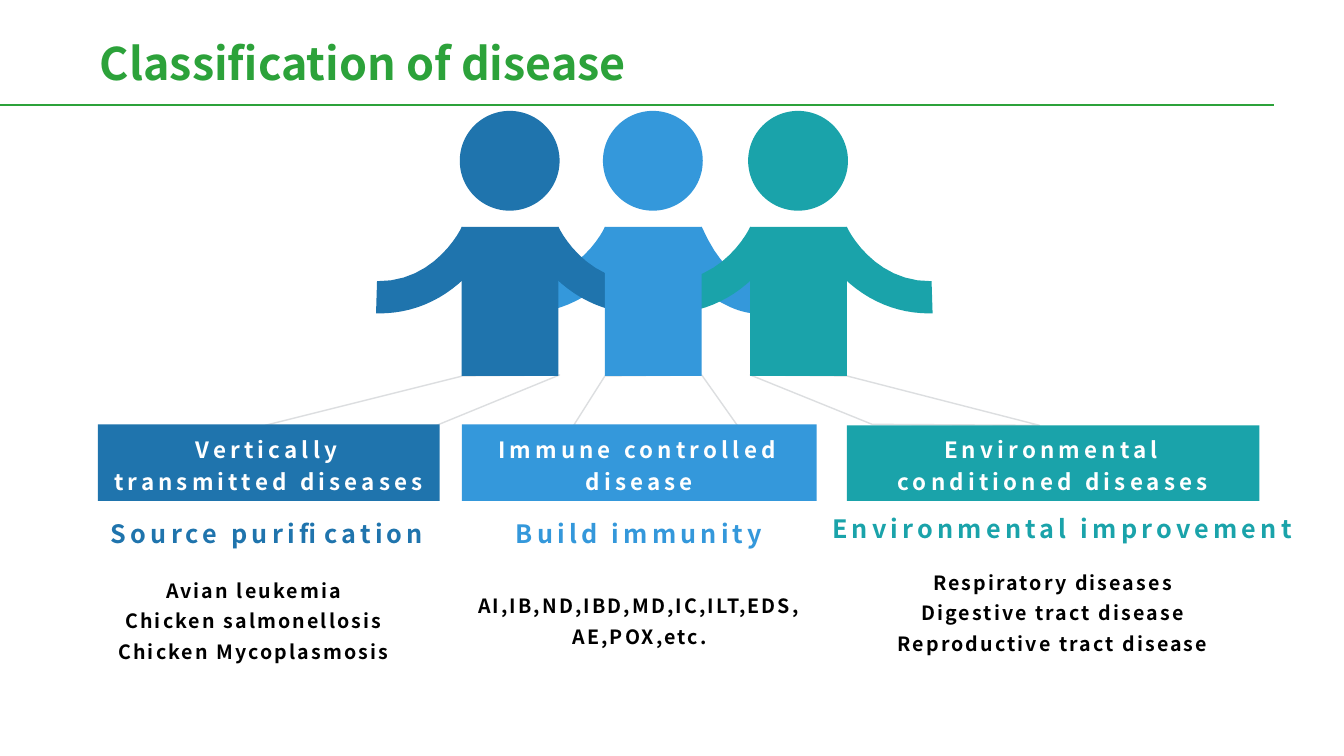
from dataclasses import dataclass

from lxml import etree
from pptx import Presentation
from pptx.dml.color import RGBColor
from pptx.enum import shapes, text
from pptx.oxml import ns
from pptx.util import Pt

PX = 9144


@dataclass(frozen=True)
class Theme:
    font: str = "Noto Sans CJK SC"
    green: str = "2CA23A"
    navy: str = "1F74AD"
    blue: str = "3498DB"
    teal: str = "1AA3AA"
    white: str = "FFFFFF"
    black: str = "000000"
    fan_line: str = "DCDEE0"
    title_size: int = 32
    remedy_size: int = 18
    card_size: int = 16
    disease_size: int = 14


THEME = Theme()
TORSO_TOP, TORSO_WIDTH, TORSO_HEIGHT = 225, 96, 148
HEAD_TOP, HEAD_SIZE = 110, 99

ARM = [
    [(85, 311)],
    [(84, 279)],
    [(26, 280), (0, 226), (0, 225)],
    [(-29, 238)],
    [(-29, 239), (-20, 258), (-3, 276)],
    [(21, 299), (50, 311), (82, 311)],
]
REACHING_ARM = [
    [(68, 312)],
    [(55, 312), (40, 311), (25, 303)],
    [(3, 293), (-14, 272), (-29, 239)],
    [(0, 225)],
    [(25, 281), (49, 280), (80, 279)],
    [(84, 279)],
    [(85, 312)],
]

COLUMNS = [
    {
        "color": THEME.navy,
        "fan": [(459, 373), (263, 422), (433, 422), (555, 372)],
        "card": (97, 421, 339, 76),
        "heading": "Vertically transmitted diseases",
        "remedy_box": (89, 497, 352, 54),
        "remedy": "Source purification",
        "disease_box": (89, 563, 325, 104),
        "diseases": ["Avian leukemia", "Chicken salmonellosis", "Chicken Mycoplasmosis"],
    },
    {
        "color": THEME.blue,
        "fan": [(600, 373), (569, 422), (732, 423), (696, 372)],
        "card": (458, 421, 352, 76),
        "heading": "Immune controlled disease",
        "remedy_box": (458, 496, 352, 55),
        "remedy": "Build immunity",
        "disease_box": (458, 563, 353, 104),
        "diseases": ["AI,IB,ND,IBD,MD,IC,ILT,EDS,AE,POX,etc."],
    },
    {
        "color": THEME.teal,
        "fan": [(840, 373), (1031, 422), (865, 421), (744, 372)],
        "card": (840, 422, 409, 75),
        "heading": "Environmental conditioned diseases",
        "remedy_box": (810, 497, 487, 43),
        "remedy": "Environmental improvement",
        "disease_box": (853, 563, 382, 88),
        "diseases": ["Respiratory diseases", "Digestive tract disease", "Reproductive tract disease"],
    },
]


def emu(*lengths):
    return [round(length * PX) for length in lengths]


def set_all(target, values):
    for name, value in values.items():
        setattr(target, name, value)


def paint(shape, color, line=None):
    shape.shadow.inherit = False
    shape.fill.solid()
    shape.fill.fore_color.rgb = RGBColor.from_string(color)
    if line:
        shape.line.color.rgb = RGBColor.from_string(line)
        shape.line.width = Pt(1)
    else:
        shape.line.fill.background()


def write(shape, lines, size, color, leading, spacing=0, align=text.PP_ALIGN.CENTER, insets=(5, 5)):
    frame = shape.text_frame
    margin_top, margin_bottom = emu(*insets)
    set_all(frame, {
        "word_wrap": True,
        "auto_size": text.MSO_AUTO_SIZE.NONE,
        "vertical_anchor": text.MSO_ANCHOR.MIDDLE,
        "margin_left": 10 * PX,
        "margin_right": 10 * PX,
        "margin_top": margin_top,
        "margin_bottom": margin_bottom,
    })
    for index, line in enumerate(lines):
        para = frame.add_paragraph() if index else frame.paragraphs[0]
        set_all(para, {"alignment": align, "line_spacing": leading, "space_before": Pt(0)})
        span = para.add_run()
        span.text = line
        set_all(span.font, {"name": THEME.font, "size": Pt(size), "bold": True})
        span.font.color.rgb = RGBColor.from_string(color)
        if spacing:
            span._r.get_or_add_rPr().set("spc", str(round(spacing * 100)))


def add_title(page, title):
    holder = page.shapes.title
    left, top, width, height = emu(89, 36, 900, 58)
    set_all(holder, {"left": left, "top": top, "width": width, "height": height})
    write(holder, [title], THEME.title_size, THEME.green, 0.9, align=text.PP_ALIGN.LEFT)


def add_rule(page):
    rule = page.shapes.add_connector(shapes.MSO_CONNECTOR.STRAIGHT, *emu(0, 104, 1264, 104))
    rule.line.color.rgb = RGBColor.from_string(THEME.green)
    rule.line.width = Pt(1.5)
    etree.SubElement(rule._element.spPr, ns.qn("a:effectLst"))


def add_block(page, kind, box, color):
    block = page.shapes.add_shape(kind, *emu(*box))
    paint(block, color)
    return block


def add_outline(page, points, color, line=None):
    start, *rest = [emu(*point) for point in points]
    builder = page.shapes.build_freeform(*start)
    builder.add_line_segments(rest, close=True)
    paint(builder.convert_to_shape(), color, line)


def trace(segments, steps=12):
    points = []
    for segment in segments:
        if len(segment) == 1:
            points += segment
            continue
        controls = [points[-1], *segment]
        for step in range(1, steps + 1):
            t = step / steps
            weights = ((1 - t) ** 3, 3 * t * (1 - t) ** 2, 3 * t * t * (1 - t), t ** 3)
            points.append(tuple(
                sum(weight * point[axis] for weight, point in zip(weights, controls))
                for axis in (0, 1)
            ))
    return points


def add_arm(page, shoulder, side, color, segments=ARM):
    add_outline(page, [(shoulder + side * x, y) for x, y in trace(segments)], color)


def add_head(page, left, color):
    add_block(page, shapes.MSO_SHAPE.OVAL, (left - 2, HEAD_TOP, HEAD_SIZE, HEAD_SIZE), color)


def add_torso(page, left, color):
    add_block(page, shapes.MSO_SHAPE.RECTANGLE, (left, TORSO_TOP, TORSO_WIDTH, TORSO_HEIGHT), color)


def add_arms(page, left, color, right_arm=ARM):
    add_arm(page, left, -1, color)
    add_arm(page, left + TORSO_WIDTH, 1, color, right_arm)


def add_people(page):
    middle = 600
    add_head(page, middle, THEME.blue)
    add_arms(page, middle, THEME.blue, REACHING_ARM)
    for left, color in ((458, THEME.navy), (744, THEME.teal)):
        add_head(page, left, color)
        add_torso(page, left, color)
        add_arms(page, left, color)
    add_torso(page, middle, THEME.blue)


def add_column(page, column):
    card = add_block(page, shapes.MSO_SHAPE.ROUNDED_RECTANGLE, column["card"], column["color"])
    card.adjustments[0] = 0
    write(card, [column["heading"]], THEME.card_size, THEME.white, 1.2, 3)
    remedy = page.shapes.add_textbox(*emu(*column["remedy_box"]))
    write(remedy, [column["remedy"]], THEME.remedy_size, column["color"], 1.2, 3, insets=(5, 0))
    diseases = page.shapes.add_textbox(*emu(*column["disease_box"]))
    write(diseases, column["diseases"], THEME.disease_size, THEME.black, 1.3, 1.5, insets=(0, 5))


def main():
    deck = Presentation()
    deck.slide_width, deck.slide_height = emu(1333, 750)
    page = deck.slides.add_slide(deck.slide_layouts[5])
    add_rule(page)
    add_title(page, "Classification of disease")
    for column in reversed(COLUMNS):
        add_outline(page, column["fan"], THEME.white, THEME.fan_line)
    add_people(page)
    for column in COLUMNS:
        add_column(page, column)
    deck.save("out.pptx")


if __name__ == "__main__":
    main()
